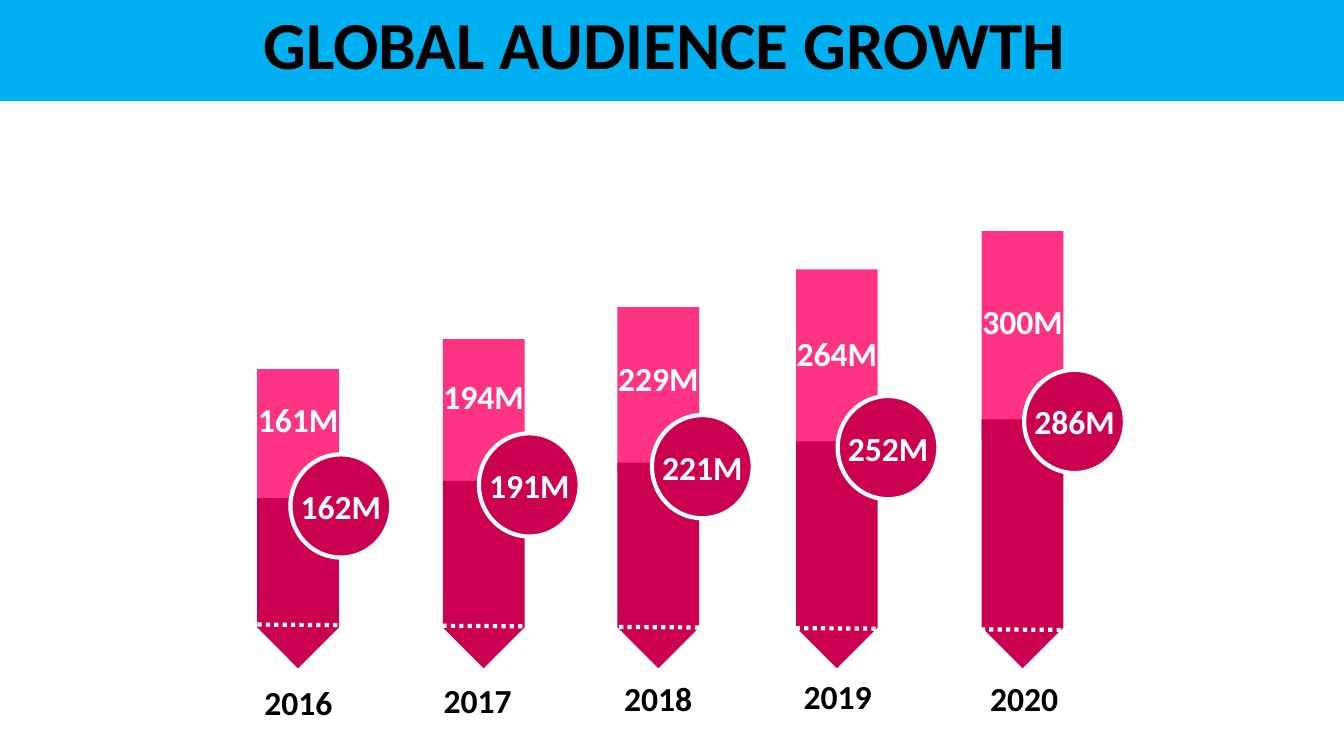
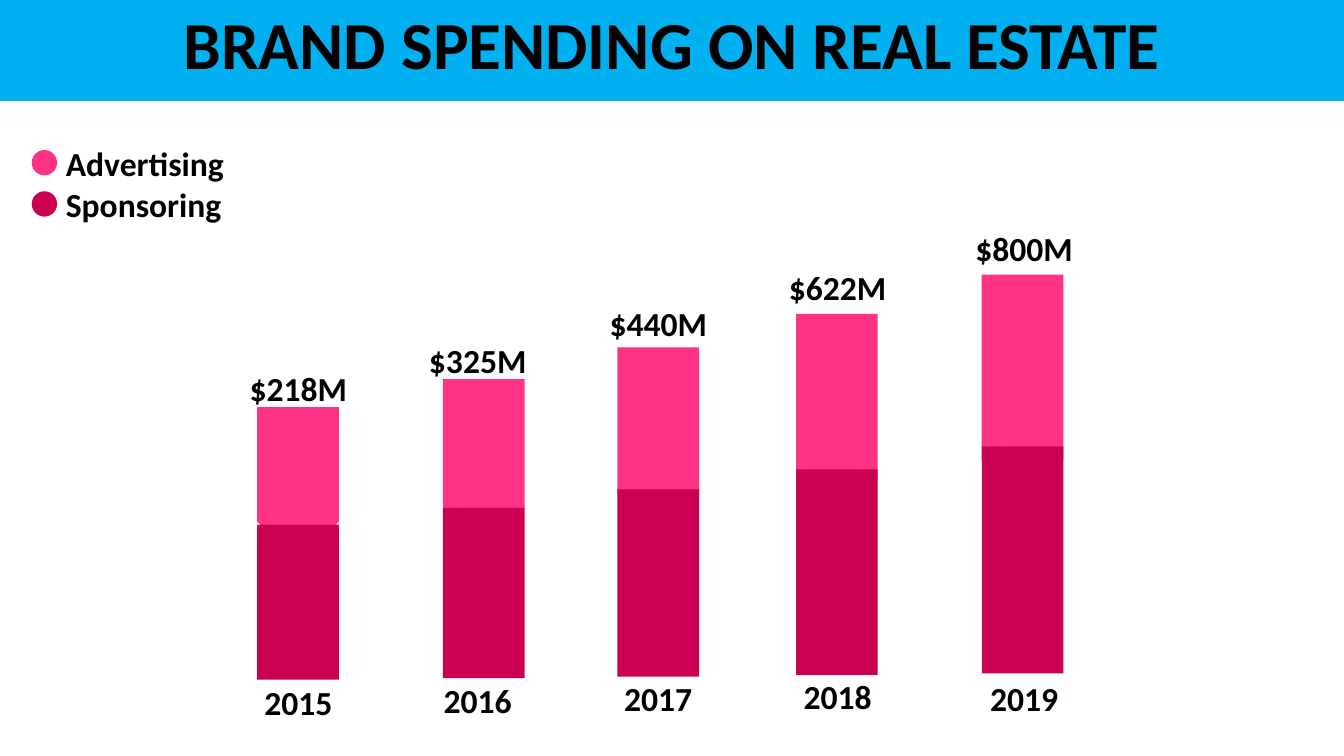
"""Build two slides of stacked bars: audience growth and brand spending."""
from pptx import Presentation
from pptx.enum.dml import MSO_LINE
from pptx.enum.shapes import MSO_CONNECTOR, MSO_SHAPE
from pptx.enum.text import MSO_ANCHOR, MSO_AUTO_SIZE, PP_ALIGN
from pptx.dml.color import RGBColor
from pptx.oxml.ns import qn
from pptx.util import Cm, Pt

BLUE, PINK, CRIMSON = "00B0F0", "FF3386", "CC0053"
WHITE, BLACK = "FFFFFF", "000000"

BAR_WIDTH = 2.06
OVERLAP = 0.757
BAR_X = [7.51, 12.19, 16.59, 21.09, 25.77]
YEAR_X = [7.52, 12.04, 16.59, 21.11, 25.81]
YEAR_Y = [17.68, 17.63, 17.6, 17.55, 17.6]


def paint(fill, color):
    fill.solid()
    fill.fore_color.rgb = RGBColor.from_string(color)


def write(shape, text, color=BLACK, size=24, align=PP_ALIGN.CENTER):
    frame = shape.text_frame
    frame.text = text
    frame.word_wrap = True
    frame.auto_size = MSO_AUTO_SIZE.NONE
    frame.vertical_anchor = MSO_ANCHOR.MIDDLE
    frame.margin_left = frame.margin_right = 0
    paragraph = frame.paragraphs[0]
    paragraph.alignment = align
    paragraph.font.name = "Calibri"
    paragraph.font.size = Pt(size)
    paragraph.font.bold = True
    paint(paragraph.font.fill, color)


presentation = Presentation()
presentation.slide_width, presentation.slide_height = Cm(33.87), Cm(19.05)

charts = [
    {
        "title": "GLOBAL AUDIENCE GROWTH ",
        "first_year": 2016,
        "lengths": [4.29, 4.72, 5.18, 5.72, 6.27],
        "bottom": 16.84,
        "slope": 0,
        "base": MSO_SHAPE.PENTAGON,
        "values": ["161M", "194M", "229M", "264M", "300M"],
        "value_x": BAR_X,
        "value_y": [10.57, 9.98, 9.53, 8.89, 8.08],
        "value_color": WHITE,
    },
    {
        "title": "BRAND SPENDING ON REAL ESTATE",
        "first_year": 2015,
        "lengths": [3.91, 4.29, 4.72, 5.18, 5.72],
        "bottom": 17.13,
        "slope": 0.04,
        "base": MSO_SHAPE.RECTANGLE,
        "values": ["$218M", "$325M", "$440M", "$622M", "$800M"],
        "value_x": YEAR_X,
        "value_y": [9.79, 9.08, 8.14, 7.23, 6.24],
        "value_color": BLACK,
    },
]

slides = []
for chart in charts:
    slide = presentation.slides.add_slide(presentation.slide_layouts[5])
    slides.append(slide)
    title = slide.shapes.title
    title.left, title.top = Cm(0), Cm(0)
    title.width, title.height = presentation.slide_width, Cm(2.54)
    paint(title.fill, BLUE)
    write(title, chart["title"], size=48)
    title.text_frame.margin_top, title.text_frame.margin_bottom = Cm(0), Cm(0.4)

    for i, (x, length) in enumerate(zip(BAR_X, chart["lengths"])):
        middle = chart["bottom"] - chart["slope"] * i - length / 2
        for preset, y, color in [
            (MSO_SHAPE.PENTAGON, middle - OVERLAP * length, PINK),
            (chart["base"], middle, CRIMSON),
        ]:
            bar = slide.shapes.add_shape(
                preset, Cm(x - length / 2), Cm(y - BAR_WIDTH / 2), Cm(length), Cm(BAR_WIDTH)
            )
            bar.rotation = 90
            bar.shadow.inherit = False
            bar.line.fill.background()
            paint(bar.fill, color)

    years = [str(chart["first_year"] + i) for i in range(len(BAR_X))]
    for texts, xs, ys, color in [
        (chart["values"], chart["value_x"], chart["value_y"], chart["value_color"]),
        (years, YEAR_X, YEAR_Y, BLACK),
    ]:
        for text, x, y in zip(texts, xs, ys):
            label = slide.shapes.add_textbox(Cm(x - 1.5), Cm(y - 0.7), Cm(3), Cm(1.4))
            write(label, text, color)

audience, spending = slides

for text, x, y in [
    ("162M", 8.59, 12.75),
    ("191M", 13.34, 12.22),
    ("221M", 17.7, 11.76),
    ("252M", 22.38, 11.28),
    ("286M", 27.08, 10.62),
]:
    bubble = audience.shapes.add_shape(
        MSO_SHAPE.OVAL, Cm(x - 1.27), Cm(y - 1.3), Cm(2.54), Cm(2.6)
    )
    bubble.shadow.inherit = False
    paint(bubble.fill, CRIMSON)
    paint(bubble.line.fill, WHITE)
    bubble.line.width = Pt(3)
    write(bubble, text, WHITE)
    bubble.text_frame.word_wrap = False

dots = audience.shapes.add_connector(
    MSO_CONNECTOR.STRAIGHT, Cm(3.73), Cm(15.72), Cm(27.91), Cm(15.88)
)
paint(dots.line.fill, WHITE)
dots.line.width = Pt(3)
dots.line.dash_style = MSO_LINE.ROUND_DOT
properties = dots._element.spPr
properties.append(properties.makeelement(qn("a:effectLst"), {}))

for i, (name, color) in enumerate([("Advertising", PINK), ("Sponsoring", CRIMSON)]):
    y = 4.1 + 1.04 * i
    key = spending.shapes.add_shape(MSO_SHAPE.OVAL, Cm(0.8), Cm(y - 0.32), Cm(0.64), Cm(0.64))
    key.shadow.inherit = False
    key.line.fill.background()
    paint(key.fill, color)
    entry = spending.shapes.add_textbox(Cm(1.66), Cm(y - 0.64), Cm(8.6), Cm(1.28))
    write(entry, name, align=PP_ALIGN.LEFT)

presentation.save("out.pptx")
